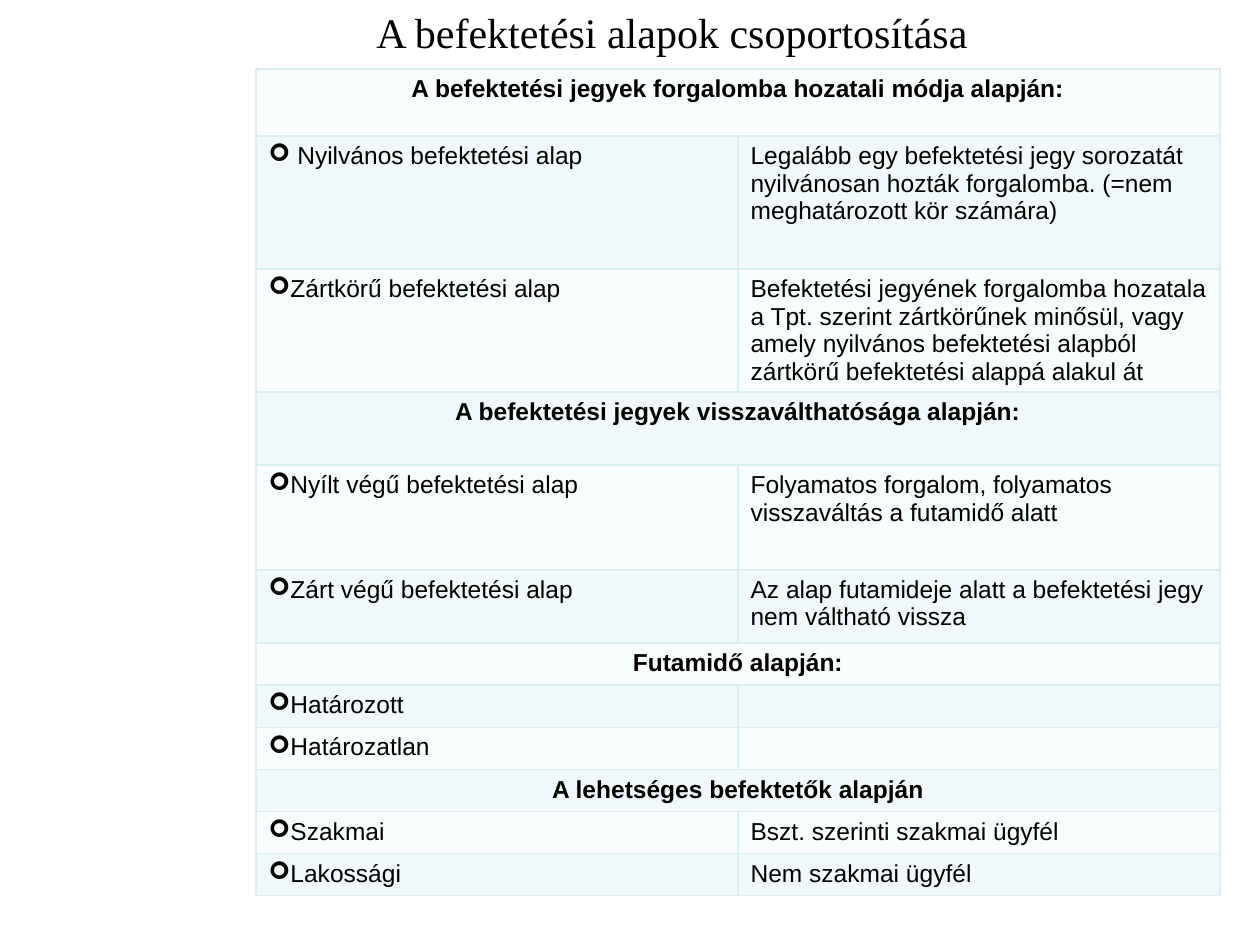
from lxml.etree import SubElement
from pptx import Presentation
from pptx.dml.color import RGBColor
from pptx.enum.text import PP_ALIGN
from pptx.oxml.ns import qn

theme = {
    "ink": RGBColor(0, 0, 0),
    "bands": [RGBColor.from_string("F8FCFC"), RGBColor.from_string("F1F8F9")],
    "edge": "DAEDEF",
    "title": {"name": "Times New Roman", "size": 24 * 12700, "bold": False},
    "body": {"name": "Arial", "size": 14 * 12700, "bold": False},
    "head": {"name": "Arial", "size": 14 * 12700, "bold": True},
}


def px(n):
    return round(n * 914400 / 126)


def write(par, text, kind):
    run = par.add_run()
    run.text = text
    for key, value in theme[kind].items():
        setattr(run.font, key, value)
    run.font.color.rgb = theme["ink"]


rows = [
    (67, ["A befektetési jegyek forgalomba hozatali módja alapján:"]),
    (133, [" Nyilvános befektetési alap",
           "Legalább egy befektetési jegy sorozatát nyilvánosan hozták "
           "forgalomba. (=nem meghatározott kör számára)"]),
    (123, ["Zártkörű befektetési alap",
           "Befektetési jegyének forgalomba hozatala a Tpt. szerint zártkörűnek "
           "minősül, vagy amely nyilvános befektetési alapból zártkörű "
           "befektetési alappá alakul át"]),
    (73, ["A befektetési jegyek visszaválthatósága alapján:"]),
    (105, ["Nyílt végű befektetési alap",
           "Folyamatos forgalom, folyamatos visszaváltás a futamidő alatt"]),
    (73, ["Zárt végű befektetési alap",
          "Az alap futamideje alatt a befektetési jegy nem váltható vissza"]),
    (42, ["Futamidő alapján:"]),
    (42, ["Határozott", ""]),
    (42, ["Határozatlan", ""]),
    (42, ["A lehetséges befektetők alapján"]),
    (42, ["Szakmai", "Bszt. szerinti szakmai ügyfél"]),
    (42, ["Lakossági", "Nem szakmai ügyfél"]),
]

deck = Presentation()
deck.slide_width, deck.slide_height = px(1260), px(945)
slide = deck.slides.add_slide(deck.slide_layouts[6])

total = sum(high for high, _ in rows)
table = slide.shapes.add_table(
    len(rows), 2, px(256), px(69), px(965), px(total)).table
table.first_row = table.horz_banding = False
for column in table.columns:
    column.width = px(482)

for i, (high, texts) in enumerate(rows):
    table.rows[i].height = px(high)
    for j in range(2):
        cell = table.cell(i, j)
        props = cell._tc.get_or_add_tcPr()
        for side in ("lnL", "lnR", "lnT", "lnB"):
            line = SubElement(props, qn(f"a:{side}"), w="12700")
            paint = SubElement(line, qn("a:solidFill"))
            SubElement(paint, qn("a:srgbClr"), val=theme["edge"])
        cell.fill.solid()
        cell.fill.fore_color.rgb = theme["bands"][i % 2]

    if len(texts) == 1:
        table.cell(i, 0).merge(table.cell(i, 1))
        par = table.cell(i, 0).text_frame.paragraphs[0]
        par.alignment = PP_ALIGN.CENTER
        write(par, texts[0], "head")
        continue

    for j, text in enumerate(texts):
        par = table.cell(i, j).text_frame.paragraphs[0]
        if j == 0:
            props = par._p.get_or_add_pPr()
            SubElement(props, qn("a:buFont"), typeface="Wingdings")
            SubElement(props, qn("a:buChar"), char="➢")
        if text:
            write(par, text, "body")
        else:
            SubElement(par._p, qn("a:endParaRPr"), sz="1400")

title = slide.shapes.add_textbox(px(364), 0, px(622), px(63)).text_frame
title.word_wrap = False
write(title.paragraphs[0], "A befektetési alapok csoportosítása", "title")

deck.save("out.pptx")
